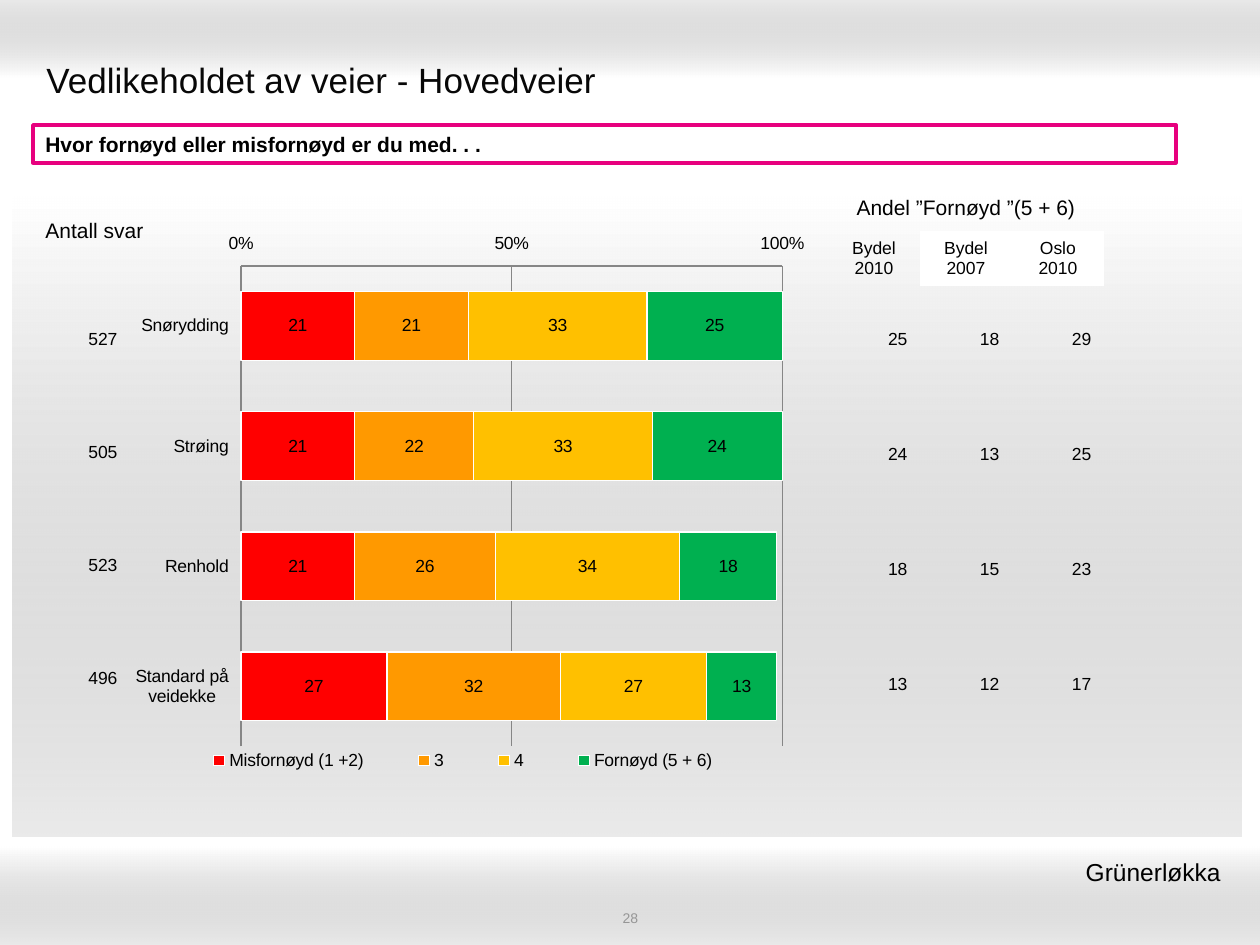
from dataclasses import dataclass

from lxml import etree
from pptx import Presentation
from pptx.chart.data import CategoryChartData
from pptx.dml.color import RGBColor
from pptx.enum.chart import (XL_CHART_TYPE, XL_LABEL_POSITION, XL_LEGEND_POSITION,
                             XL_TICK_LABEL_POSITION, XL_TICK_MARK)
from pptx.enum.shapes import MSO_SHAPE
from pptx.enum.text import MSO_ANCHOR, PP_ALIGN
from pptx.oxml import parse_xml
from pptx.oxml.ns import nsdecls, qn
from pptx.util import Pt

RECTANGLE = MSO_SHAPE.RECTANGLE
LEFT, CENTER, RIGHT = PP_ALIGN.LEFT, PP_ALIGN.CENTER, PP_ALIGN.RIGHT
TOP, MIDDLE = MSO_ANCHOR.TOP, MSO_ANCHOR.MIDDLE
STACKED_BARS = XL_CHART_TYPE.BAR_STACKED
NO_TICK, INNER_TICK = XL_TICK_MARK.NONE, XL_TICK_MARK.INSIDE
LOW = XL_TICK_LABEL_POSITION.LOW
PLAIN_TABLE_STYLE = "{2D5ABB26-0587-4C30-8999-92F81FD0307C}"


@dataclass(frozen=True)
class Theme:
    font: str = "Arial"
    black: str = "000000"
    title_color: str = "080808"
    muted: str = "969696"
    white: str = "FFFFFF"
    shade: str = "999999"
    accent: str = "E7007E"
    grid: str = "868686"
    title: int = 20
    footer: int = 14
    heading: int = 12
    body: int = 10
    number: int = 8


THEME = Theme()

CATEGORIES = ["Snørydding", "Strøing", "Renhold", "Standard på veidekke"]
SERIES = [
    ("Misfornøyd (1 +2)", "FF0000", (21, 21, 21, 27)),
    ("3", "FF9900", (21, 22, 26, 32)),
    ("4", "FFC000", (33, 33, 34, 27)),
    ("Fornøyd (5 + 6)", "00B050", (25, 24, 18, 13)),
]
ANSWER_COUNTS = [["527"], ["505"], ["523"], ["496"]]
SATISFIED_SHARES = [["25", "18", "29"], ["24", "13", "25"],
                    ["18", "15", "23"], ["13", "12", "17"]]
SHARE_HEADINGS = [["Andel ”Fornøyd ”(5 + 6)", "", ""],
                  ["Bydel\n2010", "Bydel\n2007", "Oslo\n2010"]]


def px(length):
    return round(length * 914400 / 126)


def rgb(color):
    return RGBColor.from_string(color)


def write(frame, text, size=THEME.body, color=THEME.black, bold=False, align=LEFT):
    """Fill a text frame, one paragraph for each line of text."""
    for index, line in enumerate(text.split("\n")):
        para = frame.add_paragraph() if index else frame.paragraphs[0]
        para.alignment = align
        span = para.add_run()
        span.text = line
        span.font.name = THEME.font
        span.font.size = Pt(size)
        span.font.bold = bold
        span.font.color.rgb = rgb(color)


def add_text(page, left, top, width, height, text, anchor=TOP, **text_format):
    box = page.shapes.add_textbox(px(left), px(top), px(width), px(height))
    box.text_frame.word_wrap = True
    box.text_frame.vertical_anchor = anchor
    write(box.text_frame, text, **text_format)


def add_rectangle(page, left, top, width, height):
    shape = page.shapes.add_shape(RECTANGLE, px(left), px(top), px(width), px(height))
    shape.shadow.inherit = False
    return shape


def add_shaded_band(page, left, top, width, height, angle):
    """Fade from white to translucent grey; the angle is counter-clockwise."""
    band = add_rectangle(page, left, top, width, height)
    band.line.fill.background()
    band.fill.gradient()
    band.fill.gradient_angle = angle
    for stop, color, position in zip(band.fill.gradient_stops,
                                     (THEME.white, THEME.shade), (0, 1)):
        stop.color.rgb = rgb(color)
        stop.position = position
    shade = band.element.spPr.findall(".//" + qn("a:srgbClr"))[-1]
    etree.SubElement(shade, qn("a:alpha")).set("val", "20000")


def add_question(page, left, top, width, height, text):
    box = add_rectangle(page, left, top, width, height)
    box.fill.solid()
    box.fill.fore_color.rgb = rgb(THEME.white)
    box.line.color.rgb = rgb(THEME.accent)
    box.line.width = Pt(2)
    box.text_frame.word_wrap = True
    box.text_frame.vertical_anchor = MIDDLE
    write(box.text_frame, text, size=THEME.heading, bold=True)


def add_plain_table(page, left, top, column_width, row_heights, rows, **text_format):
    columns = len(rows[0])
    frame = page.shapes.add_table(len(rows), columns, px(left), px(top),
                                  px(column_width * columns), px(sum(row_heights)))
    table = frame.table
    table.first_row = table.horz_banding = False
    frame.element.find(".//" + qn("a:tableStyleId")).text = PLAIN_TABLE_STYLE
    for column in table.columns:
        column.width = px(column_width)
    for row, height, texts in zip(table.rows, row_heights, rows):
        row.height = px(height)
        for cell, text in zip(row.cells, texts):
            cell.vertical_anchor = MIDDLE
            cell.fill.background()
            if text:
                write(cell.text_frame, text, **text_format)
    return table


def add_share_headings(page):
    table = add_plain_table(page, 828, 185, 92, [46, 55], SHARE_HEADINGS, align=CENTER)
    heading = table.cell(0, 0)
    heading.merge(table.cell(0, 2))
    heading.text_frame.paragraphs[0].runs[0].font.size = Pt(THEME.heading)
    for column in (1, 2):
        fill = table.cell(1, column).fill
        fill.solid()
        fill.fore_color.rgb = rgb(THEME.white)


def set_layout(element, x, y, width, height, target=""):
    """Place a chart part by fractions of the chart's size."""
    for old in element.findall(qn("c:layout")):
        element.remove(old)
    layout = parse_xml(
        f'<c:layout {nsdecls("c")}><c:manualLayout>{target}'
        '<c:xMode val="edge"/><c:yMode val="edge"/>'
        f'<c:x val="{x}"/><c:y val="{y}"/><c:w val="{width}"/><c:h val="{height}"/>'
        '</c:manualLayout></c:layout>')
    position = element.find(qn("c:legendPos"))
    element.insert(0 if position is None else element.index(position) + 1, layout)


def style_line(line, color):
    line.color.rgb = rgb(color)
    line.width = Pt(0.75)


def style_axes(chart):
    categories, values = chart.category_axis, chart.value_axis
    for axis in (categories, values):
        axis.tick_label_position = LOW
        axis.minor_tick_mark = NO_TICK
        style_line(axis.format.line, THEME.grid)
    categories.reverse_order = True
    categories.major_tick_mark = NO_TICK
    values.major_tick_mark = INNER_TICK
    values.minimum_scale, values.maximum_scale, values.major_unit = 0, 100, 50
    values.tick_labels.number_format = r"General\%"
    values.tick_labels.number_format_is_linked = False
    values.has_major_gridlines = True
    style_line(values.major_gridlines.format.line, THEME.grid)


def add_satisfaction_chart(page, left, top, width, height):
    data = CategoryChartData(number_format="0")
    data.categories = CATEGORIES
    for name, _, values in SERIES:
        data.add_series(name, values)
    chart = page.shapes.add_chart(STACKED_BARS, px(left), px(top), px(width),
                                  px(height), data).chart
    chart.has_title = False
    chart.font.name = THEME.font
    chart.font.size = Pt(THEME.body)
    chart.font.color.rgb = rgb(THEME.black)
    style_axes(chart)
    plot = chart.plots[0]
    plot.gap_width, plot.overlap = 75, 100
    plot.vary_by_categories = False
    for series, (_, color, _) in zip(plot.series, SERIES):
        series.format.fill.solid()
        series.format.fill.fore_color.rgb = rgb(color)
        style_line(series.format.line, THEME.white)
        labels = series.data_labels
        labels.show_value = True
        labels.number_format = "0"
        labels.number_format_is_linked = False
        labels.position = XL_LABEL_POSITION.CENTER
    chart.has_legend = True
    chart.legend.position = XL_LEGEND_POSITION.BOTTOM
    chart.legend.include_in_layout = False
    plot_area = chart.element.find(".//" + qn("c:plotArea"))
    set_layout(plot_area, 0.17, 0.07, 0.78, 0.84, '<c:layoutTarget val="inner"/>')
    set_layout(chart.legend._element, 0.06, 0.91, 0.86, 0.05)


def main():
    deck = Presentation()
    deck.slide_width, deck.slide_height = px(1260), px(945)
    page = deck.slides.add_slide(deck.slide_layouts[6])

    add_shaded_band(page, 0, 0, 1260, 78, angle=90)
    add_shaded_band(page, 0, 847, 1260, 98, angle=270)
    add_shaded_band(page, 13, 197, 1228, 640, angle=270)
    add_text(page, 34, 45, 1191, 69, "Vedlikeholdet av veier - Hovedveier",
             anchor=MIDDLE, size=THEME.title, color=THEME.title_color)
    add_text(page, 431, 909, 399, 18, "28", anchor=MIDDLE, size=THEME.number,
             color=THEME.muted, align=CENTER)
    add_question(page, 33, 125, 1143, 38, "Hvor fornøyd eller misfornøyd er du med. . .")
    add_satisfaction_chart(page, 123, 226, 694, 572)
    add_plain_table(page, 828, 282, 92, [115] * 4, SATISFIED_SHARES, align=RIGHT)
    add_share_headings(page)
    add_plain_table(page, 64, 283, 66, [113] * 4, ANSWER_COUNTS, align=RIGHT)
    add_plain_table(page, 5, 194, 179, [74], [["Antall svar"]],
                    size=THEME.heading, align=CENTER)
    add_text(page, 769, 851, 471, 43, "Grünerløkka ", size=THEME.footer, align=RIGHT)
    deck.save("out.pptx")


if __name__ == "__main__":
    main()
